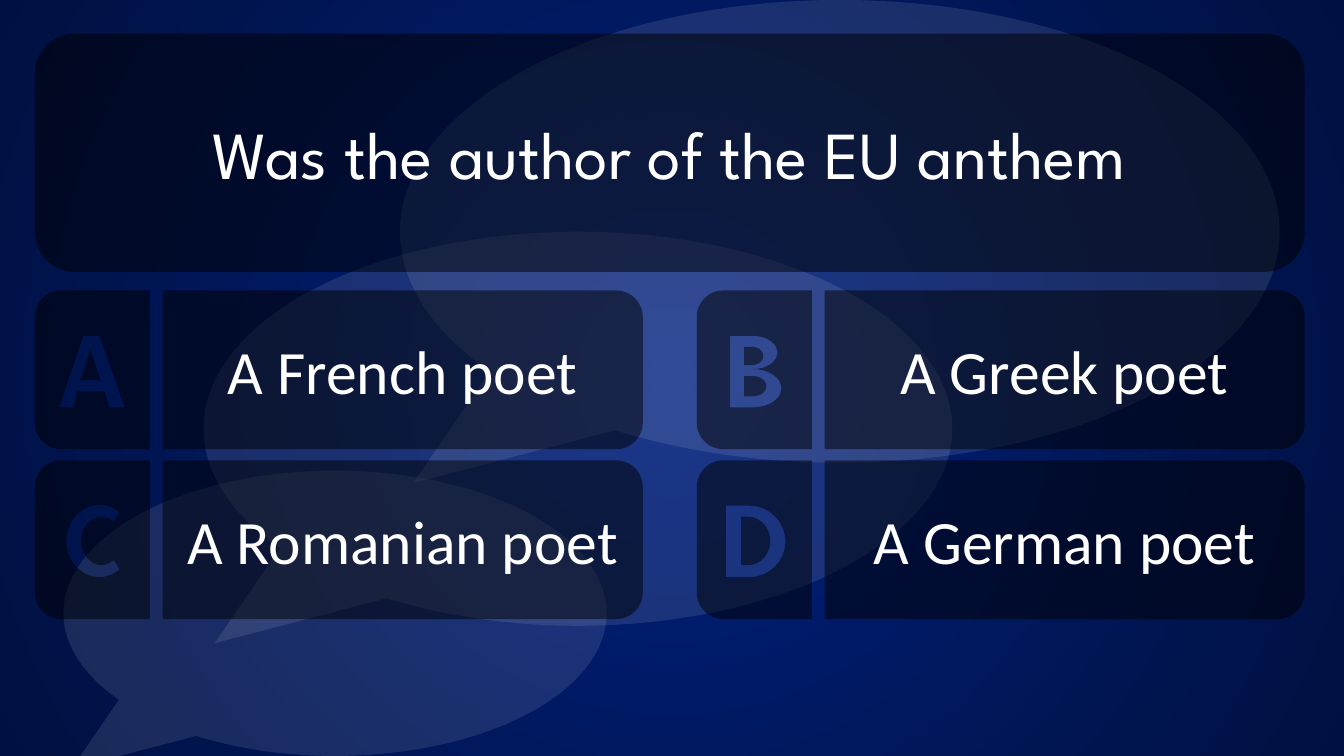
from math import cos, pi, sin

from lxml import etree
from pptx import Presentation
from pptx.dml.color import RGBColor
from pptx.enum.shapes import MSO_SHAPE
from pptx.enum.text import MSO_ANCHOR, PP_ALIGN
from pptx.oxml.ns import qn
from pptx.util import Cm, Pt

BUBBLE, ROUND = MSO_SHAPE.OVAL_CALLOUT, MSO_SHAPE.ROUNDED_RECTANGLE
MIDDLE, CENTER = MSO_ANCHOR.MIDDLE, PP_ALIGN.CENTER
WHITE = RGBColor(0xFF, 0xFF, 0xFF)
BLACK = RGBColor(0x00, 0x00, 0x00)
BLUE = RGBColor(0x00, 0x21, 0x7F)
NAVY = RGBColor(0x00, 0x10, 0x40)

UNIT = Cm(2.54) / 100
RADIUS = Cm(0.67)
BADGE, GAP = Cm(2.9), Cm(0.32)


def arc(x, y, wide, high, start, end):
    """Return points on an ellipse between two angles in quarter turns."""
    steps = 16
    angles = [(start + (end - start) * i / steps) * pi / 2 for i in range(steps + 1)]
    return [(x + wide * cos(a), y + high * sin(a)) for a in angles]


def bowl(x, top, low, wide):
    """Return a half ellipse that bulges to the right."""
    return arc(x, (top + low) / 2, wide, (low - top) / 2, -1, 1)


def glyph(letter):
    """Return the outlines of a bold letter, in hundredths of an inch."""
    if letter == "A":
        legs = [(48, 45), (64, 45), (89, 116), (74, 116),
                (69, 100), (42, 100), (38, 116), (24, 116)]
        return [[(55, 59), (65, 89), (45, 89)], legs]
    if letter == "B":
        holes = [[(47, 56), *bowl(55, 56, 74, 11), (47, 74)],
                 [(47, 85), *bowl(56, 85, 105, 13), (47, 105)]]
        lobes = bowl(56, 45, 78, 24) + bowl(56, 78, 116, 28)
        return [*holes, [(33, 45), *lobes, (33, 116)]]
    if letter == "C":
        return [arc(64, 80, 33, 36, 0.58, 3.42) + arc(66, 80, 20, 24, 3.42, 0.58)]
    return [[(44, 56), *bowl(51, 56, 104, 22), (44, 104)],
            [(29, 45), *bowl(52, 45, 116, 36), (29, 116)]]


def paint(shape, color, alpha):
    """Give a shape a see-through fill with no line or shadow."""
    shape.shadow.inherit = False
    shape.line.fill.background()
    shape.fill.solid()
    shape.fill.fore_color.rgb = color
    tint = shape.element.spPr.find(qn("a:solidFill"))[0]
    etree.SubElement(tint, qn("a:alpha")).set("val", str(alpha * 1000))


def write(shape, text, font, size):
    """Centre one run of white text in a shape."""
    frame = shape.text_frame
    frame.word_wrap = True
    frame.vertical_anchor = MIDDLE
    para = frame.paragraphs[0]
    para.alignment = CENTER
    run = para.add_run()
    run.text = text
    run.font.name = font
    run.font.size = Pt(size)
    run.font.color.rgb = WHITE


def rim(box, flip):
    """Return a box with round corners on the right, or on the left if flipped."""
    left, top, width, height = box
    x, low = width - RADIUS, height - RADIUS
    points = [(0, 0), *arc(x, RADIUS, RADIUS, RADIUS, -1, 0),
              *arc(x, low, RADIUS, RADIUS, 0, 1), (0, height)]
    return [(left + (width - x if flip else x), top + y) for x, y in points]


def tile(slide, box, flip=False, holes=()):
    """Draw a dark tile, with any holes cut out of it."""
    first, *rest = rim(box, flip)
    pen = slide.shapes.build_freeform(*first)
    pen.add_line_segments(rest)
    for hole in holes:
        first, *rest = [(box[0] + x * UNIT, box[1] + y * UNIT) for x, y in hole]
        pen.move_to(*first)
        pen.add_line_segments(rest)
    shape = pen.convert_to_shape()
    paint(shape, BLACK, 50)
    return shape


def answer(slide, box, letter, text):
    """Draw a letter badge and its answer side by side."""
    left, top, width, height = box
    shift = BADGE + GAP
    body = tile(slide, (left + shift, top, width - shift, height))
    write(body, text, "Calibri", 44)
    tile(slide, (left, top, BADGE, height), True, glyph(letter))


def choices(slide, box, texts):
    """Set the answers in a grid of two columns and two rows."""
    left, top, width, height = box
    wide, high = Cm(15.32), Cm(4)
    for place, (letter, text) in enumerate(zip("ABCD", texts)):
        row, col = divmod(place, 2)
        x = left + col * (width - wide)
        y = top + row * (height - high)
        answer(slide, (x, y, wide, high), letter, text)


def question(slide, box, text):
    """Draw the question panel."""
    panel = slide.shapes.add_shape(ROUND, *box)
    paint(panel, BLACK, 50)
    write(panel, text, "League Spartan", 48)


def bubbles(slide, boxes):
    """Draw the group of pale speech bubbles."""
    group = slide.shapes.add_group_shape()
    for box in boxes:
        shape = group.shapes.add_shape(BUBBLE, *map(Cm, box))
        shape.adjustments[0] = -0.485
        shape.adjustments[1] = 0.544
        paint(shape, WHITE, 10)


def backdrop(slide):
    """Fill the background with a round gradient."""
    fill = slide.background.fill
    fill.gradient()
    for stop, color, place in zip(fill.gradient_stops, (BLUE, NAVY), (0, 1)):
        stop.color.rgb = color
        stop.position = place
    grad = slide.element.find(".//" + qn("a:gradFill"))
    grad.remove(grad.find(qn("a:lin")))
    ring = etree.Element(qn("a:path"))
    ring.set("path", "circle")
    focus = etree.SubElement(ring, qn("a:fillToRect"))
    for edge in "ltrb":
        focus.set(edge, "50000")
    grad.find(qn("a:gsLst")).addnext(ring)


def main():
    """Build the quiz slide and save it."""
    deck = Presentation()
    deck.slide_width, deck.slide_height = Cm(33.87), Cm(19.05)
    slide = deck.slides.add_slide(deck.slide_layouts[6])
    backdrop(slide)
    bubbles(slide, [
        (1.6, 11.86, 13.69, 7.19),
        (5.13, 5.84, 18.87, 9.93),
        (10.08, 0, 22.17, 11.66),
    ])
    left, width = Cm(0.88), Cm(32)
    choices(slide, (left, Cm(7.32), width, Cm(8.28)), [
        "A French poet",
        "A Greek poet",
        "A Romanian poet",
        "A German poet",
    ])
    question(slide, (left, Cm(0.85), width, Cm(6)), "Was the author of the EU anthem")
    deck.save("out.pptx")


if __name__ == "__main__":
    main()
